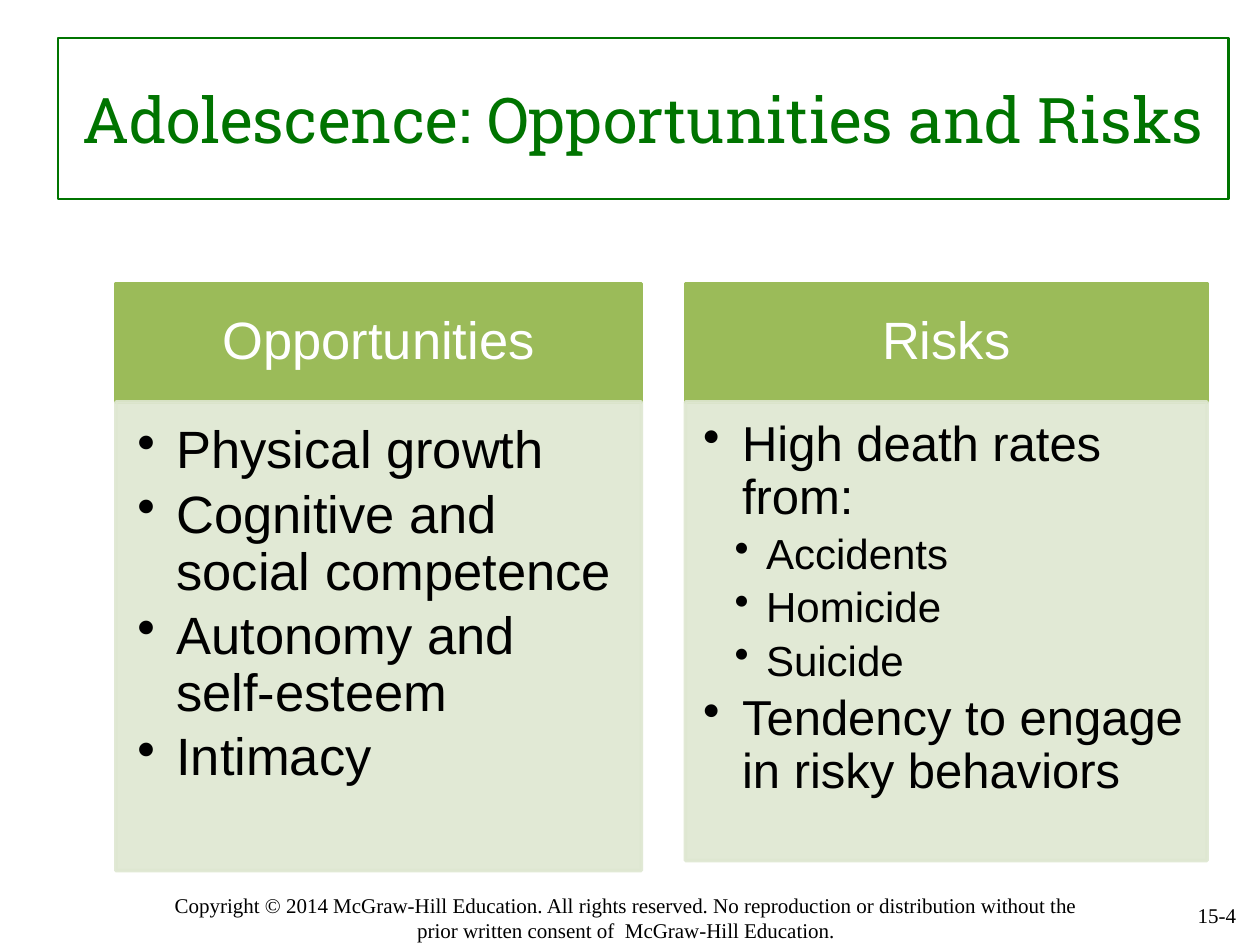
from dataclasses import dataclass

from lxml import etree
from pptx import Presentation
from pptx.dml.color import RGBColor
from pptx.enum.shapes import MSO_SHAPE
from pptx.enum.text import MSO_ANCHOR, PP_ALIGN
from pptx.oxml.ns import qn
from pptx.util import Inches, Pt

RECT = MSO_SHAPE.RECTANGLE
TOP, MIDDLE = MSO_ANCHOR.TOP, MSO_ANCHOR.MIDDLE
LEFT, CENTER, RIGHT = PP_ALIGN.LEFT, PP_ALIGN.CENTER, PP_ALIGN.RIGHT

DARK = RGBColor(0x00, 0x74, 0x00)
GREEN = RGBColor(0x9B, 0xBB, 0x59)
PALE = RGBColor(0xDE, 0xE7, 0xD1)
BLACK = RGBColor(0x00, 0x00, 0x00)
WHITE = RGBColor(0xFF, 0xFF, 0xFF)

HEAD_TOP, HEAD_TALL = 2.25, 0.94
INDENTS = [(0.31, 0.31), (0.5, 0.25)]


@dataclass
class Item:
    text: str
    size: int
    level: int = 0


@dataclass
class Panel:
    title: str
    left: float
    width: float
    height: float
    pads: tuple[float, float, float, float]
    items: list[Item]


PANELS = [
    Panel("Opportunities", 0.92, 4.17, 3.72, (0.17, 0.17, 0.23, 0.26), [
        Item("Physical growth", 30),
        Item("Cognitive and social competence", 30),
        Item("Autonomy and self-esteem", 30),
        Item("Intimacy", 30),
    ]),
    Panel("Risks", 5.44, 4.14, 3.64, (0.14, 0.14, 0.19, 0.21), [
        Item("High death rates from:", 28),
        Item("Accidents", 24, 1),
        Item("Homicide", 24, 1),
        Item("Suicide", 24, 1),
        Item("Tendency to engage in risky behaviors", 28),
    ]),
]


def set_font(para, name: str, size: int, color: RGBColor, align) -> None:
    para.alignment = align
    para.font.name = name
    para.font.size = Pt(size)
    para.font.color.rgb = color


def set_frame(frame, pads: tuple, anchor) -> None:
    frame.word_wrap = True
    frame.vertical_anchor = anchor
    sides = [Inches(pad) for pad in pads]
    frame.margin_left, frame.margin_top, frame.margin_right, frame.margin_bottom = sides


def add_bullet(para, level: int) -> None:
    indent, hang = INDENTS[level]
    para.level = level
    props = para._p.get_or_add_pPr()
    props.set("marL", str(Inches(indent)))
    props.set("indent", str(-Inches(hang)))
    etree.SubElement(props, qn("a:buChar")).set("char", "•")


def add_box(slide, panel: Panel, top: float, height: float, color: RGBColor):
    box = slide.shapes.add_shape(
        RECT, Inches(panel.left), Inches(top), Inches(panel.width), Inches(height))
    box.shadow.inherit = False
    box.fill.solid()
    box.fill.fore_color.rgb = color
    box.line.color.rgb = color
    box.line.width = Pt(2)
    return box


def add_panel(slide, panel: Panel) -> None:
    head = add_box(slide, panel, HEAD_TOP, HEAD_TALL, GREEN)
    set_frame(head.text_frame, (0.23, 0.13, 0.23, 0.13), MIDDLE)
    para = head.text_frame.paragraphs[0]
    para.text = panel.title
    para.line_spacing = 0.9
    set_font(para, "Arial", 30, WHITE, CENTER)

    body = add_box(slide, panel, HEAD_TOP + HEAD_TALL, panel.height, PALE)
    for tone in body._element.spPr.iter(qn("a:srgbClr")):
        etree.SubElement(tone, qn("a:alpha")).set("val", "90000")
    frame = body.text_frame
    set_frame(frame, panel.pads, TOP)
    for index, item in enumerate(panel.items):
        para = frame.add_paragraph() if index else frame.paragraphs[0]
        para.text = item.text
        para.line_spacing = 0.9
        para.space_after = Pt(4.5)
        add_bullet(para, item.level)
        set_font(para, "Arial", item.size, BLACK, LEFT)


def add_note(slide, text: str, area: tuple, pads: tuple, anchor, align) -> None:
    box = slide.shapes.add_textbox(*[Inches(value) for value in area])
    set_frame(box.text_frame, pads, anchor)
    para = box.text_frame.paragraphs[0]
    para.text = text
    set_font(para, "Times New Roman", 12, BLACK, align)


def add_title(slide, text: str) -> None:
    title = slide.shapes.title
    title.left, title.top = Inches(0.46), Inches(0.3)
    title.width, title.height = Inches(9.29), Inches(1.28)
    title.line.color.rgb = DARK
    title.line.width = Pt(1.25)
    set_frame(title.text_frame, (0.1, 0.05, 0.1, 0.05), MIDDLE)
    para = title.text_frame.paragraphs[0]
    para.text = text
    set_font(para, "Roboto Slab", 36, DARK, CENTER)


def main() -> None:
    deck = Presentation()
    deck.slide_width, deck.slide_height = Inches(10), Inches(7.5)
    slide = deck.slides.add_slide(deck.slide_layouts[5])
    add_title(slide, "Adolescence: Opportunities and Risks")
    add_note(
        slide,
        "Copyright © 2014 McGraw-Hill Education. All rights reserved. "
        "No reproduction or distribution without the prior written consent "
        "of  McGraw-Hill Education.",
        (1.27, 7.08, 7.4, 0.4), (0, 0, 0, 0), TOP, CENTER)
    add_note(slide, "15-4", (7.58, 7.06, 2.33, 0.4),
             (0.1, 0.05, 0.1, 0.05), MIDDLE, RIGHT)
    for panel in PANELS:
        add_panel(slide, panel)
    deck.save("out.pptx")


if __name__ == "__main__":
    main()
